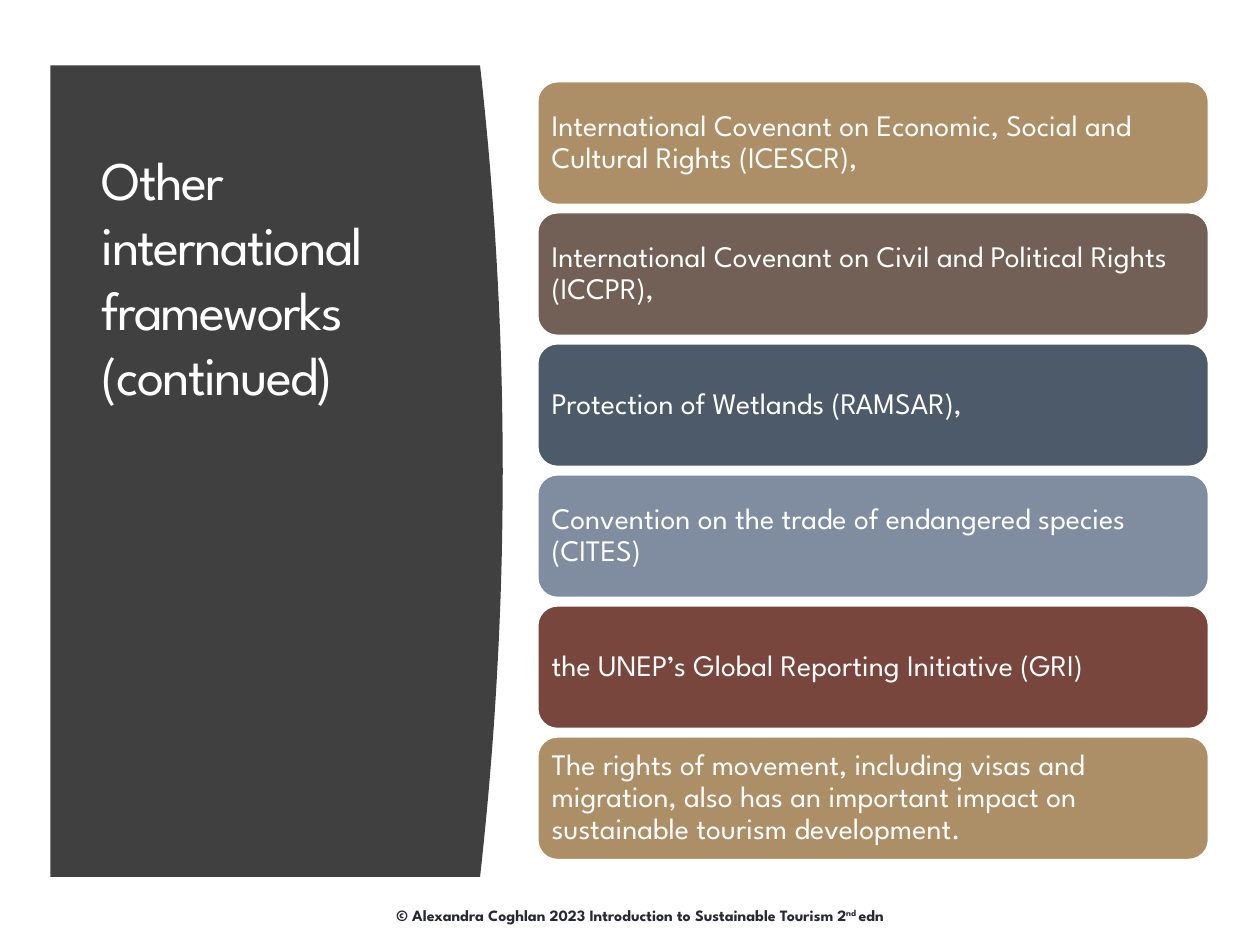
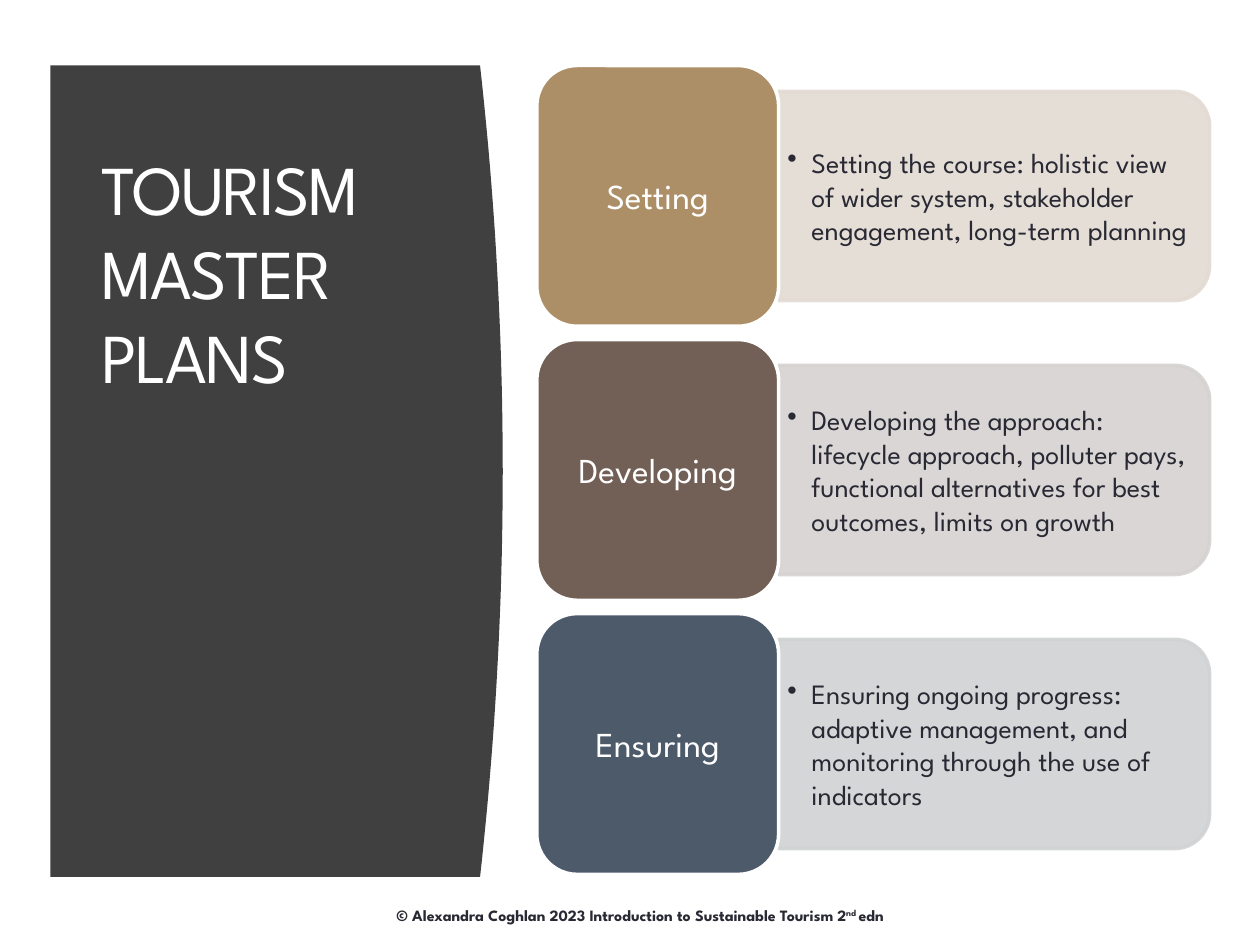
from lxml import etree
from pptx import Presentation
from pptx.dml.color import RGBColor as Color
from pptx.enum.shapes import MSO_SHAPE as Shape
from pptx.enum.text import MSO_ANCHOR as Anchor, PP_ALIGN as Align
from pptx.oxml.ns import qn
from pptx.util import Inches, Pt

FONT = "League Spartan"
COLORS = {
    "white": "FFFFFF", "ink": "292934", "panel": "404040",
    "sand": "AD8F67", "brown": "726056", "slate": "4C5A6A",
    "steel": "808DA0", "rust": "79463D",
    "pale_sand": "E3DBD3", "pale_brown": "D5D2D1", "pale_slate": "D0D2D4",
}


def add_run(paragraph, text, size, color, bold=False, **attributes):
    run = paragraph.add_run()
    run.text = text
    run.font.name = FONT
    run.font.size = Pt(size)
    run.font.bold = bold
    run.font.color.rgb = Color.from_string(COLORS[color])
    for name, value in attributes.items():
        run.font._element.set(name, value)


def add_block(slide, kind, box, fill=None, insets=(0.1, 0.05), anchor=Anchor.TOP, align=Align.LEFT):
    lengths = [Inches(value) for value in box]
    if kind is None:
        shape = slide.shapes.add_textbox(*lengths)
    else:
        shape = slide.shapes.add_shape(kind, *lengths)
        shape.shadow.inherit = False
        shape.fill.solid()
        shape.fill.fore_color.rgb = Color.from_string(COLORS[fill])
        shape.line.color.rgb = Color.from_string(COLORS["white"])
        shape.line.width = Pt(2.08)
    frame = shape.text_frame
    frame.word_wrap = True
    frame.vertical_anchor = anchor
    frame.margin_left = frame.margin_right = Inches(insets[0])
    frame.margin_top = frame.margin_bottom = Inches(insets[1])
    paragraph = frame.paragraphs[0]
    paragraph.alignment = align
    return shape, paragraph


presentation = Presentation()
presentation.slide_width = Inches(10)
presentation.slide_height = Inches(7.5)

PANEL_LEFT, PANEL_TOP, PANEL_BOTTOM = 0.4, 0.52, 6.96
PANEL_EDGE, PANEL_BULGE, CURVE_STEPS = 3.81, 0.18, 48
titles = [
    (["Other international frameworks", "(continued)"], 31),
    (["TOURISM MASTER PLANS"], 40),
]
slides = []
for title_lines, title_size in titles:
    slide = presentation.slides.add_slide(presentation.slide_layouts[6])
    slides.append(slide)

    footer, paragraph = add_block(slide, None, (2.72, 7.14, 4.72, 0.25), align=Align.CENTER)
    add_run(paragraph, "© Alexandra Coghlan 2023 Introduction to Sustainable Tourism 2", 9, "ink", True)
    add_run(paragraph, "nd ", 9, "ink", True, baseline="30000")
    add_run(paragraph, "edn", 9, "ink", True)

    curve = []
    for step in range(CURVE_STEPS + 1):
        part = step / CURVE_STEPS
        x = PANEL_EDGE + PANEL_BULGE * (1 - (2 * part - 1) ** 2)
        y = PANEL_TOP + part * (PANEL_BOTTOM - PANEL_TOP)
        curve.append((Inches(x), Inches(y)))
    builder = slide.shapes.build_freeform(Inches(PANEL_LEFT), Inches(PANEL_TOP))
    builder.add_line_segments(curve + [(Inches(PANEL_LEFT), Inches(PANEL_BOTTOM))], close=True)
    panel = builder.convert_to_shape()
    panel.shadow.inherit = False
    panel.fill.solid()
    panel.fill.fore_color.rgb = Color.from_string(COLORS["panel"])
    panel.line.fill.background()

    title, paragraph = add_block(slide, None, (0.71, 1.11, 2.8, 5.24))
    for index, line in enumerate(title_lines):
        if index:
            paragraph.add_line_break()
        add_run(paragraph, line, title_size, "white", spc="-100")

frameworks = [
    ("International Covenant on Economic, Social and Cultural Rights (ICESCR),", "sand"),
    ("International Covenant on Civil and Political Rights (ICCPR),", "brown"),
    ("Protection of Wetlands (RAMSAR),", "slate"),
    ("Convention on the trade of endangered species (CITES)", "steel"),
    ("the UNEP’s Global Reporting Initiative (GRI)", "rust"),
    ("The rights of movement, including visas and migration, also has an important impact on "
     "sustainable tourism development.", "sand"),
]
for index, (text, fill) in enumerate(frameworks):
    bar, paragraph = add_block(slides[0], Shape.ROUNDED_RECTANGLE, (4.26, 0.64 + 1.04 * index, 5.34, 0.99),
                               fill, (0.07, 0.07), Anchor.MIDDLE)
    paragraph.line_spacing = 0.9
    add_run(paragraph, text, 17, "white")

plans = [
    ("Setting", "sand", "pale_sand",
     "Setting the course: holistic view of wider system, stakeholder engagement, long-term planning"),
    ("Developing", "brown", "pale_brown",
     "Developing the approach: lifecycle approach, polluter pays, functional alternatives for best "
     "outcomes, limits on growth"),
    ("Ensuring", "slate", "pale_slate",
     "Ensuring ongoing progress: adaptive management, and monitoring through the use of indicators"),
]
CARD_HEIGHT, DETAIL_WIDTH, DETAIL_HEIGHT, DETAIL_TEXT_HEIGHT = 2.07, 3.42, 1.66, 1.5
CARD_PITCH = (4.87 - PANEL_TOP) / 2
for index, (label, fill, pale_fill, text) in enumerate(plans):
    top = PANEL_TOP + CARD_PITCH * index
    middle = top + CARD_HEIGHT / 2

    detail, paragraph = add_block(slides[1], Shape.ROUND_2_SAME_RECTANGLE,
                                  (7.06, middle - DETAIL_WIDTH / 2, DETAIL_HEIGHT, DETAIL_WIDTH), pale_fill)
    detail.rotation = 90
    detail.line.color.rgb = Color.from_string(COLORS[pale_fill])
    for color in detail._element.spPr.iter(qn("a:srgbClr")):
        etree.SubElement(color, qn("a:alpha"), val="90000")

    detail_text, paragraph = add_block(slides[1], None,
                                       (6.18, middle - DETAIL_TEXT_HEIGHT / 2, 3.34, DETAIL_TEXT_HEIGHT),
                                       insets=(0.07, 0.03), anchor=Anchor.MIDDLE)
    properties = paragraph._p.get_or_add_pPr()
    properties.set("marL", str(Inches(0.19)))
    properties.set("indent", str(Inches(-0.19)))
    etree.SubElement(properties, qn("a:buChar"), char="•")
    add_run(paragraph, text, 16, "ink")

    card, paragraph = add_block(slides[1], Shape.ROUNDED_RECTANGLE, (4.26, top, 1.92, CARD_HEIGHT),
                                fill, (0.08, 0.04), Anchor.MIDDLE, Align.CENTER)
    add_run(paragraph, label, 20, "white")

presentation.save("out.pptx")
